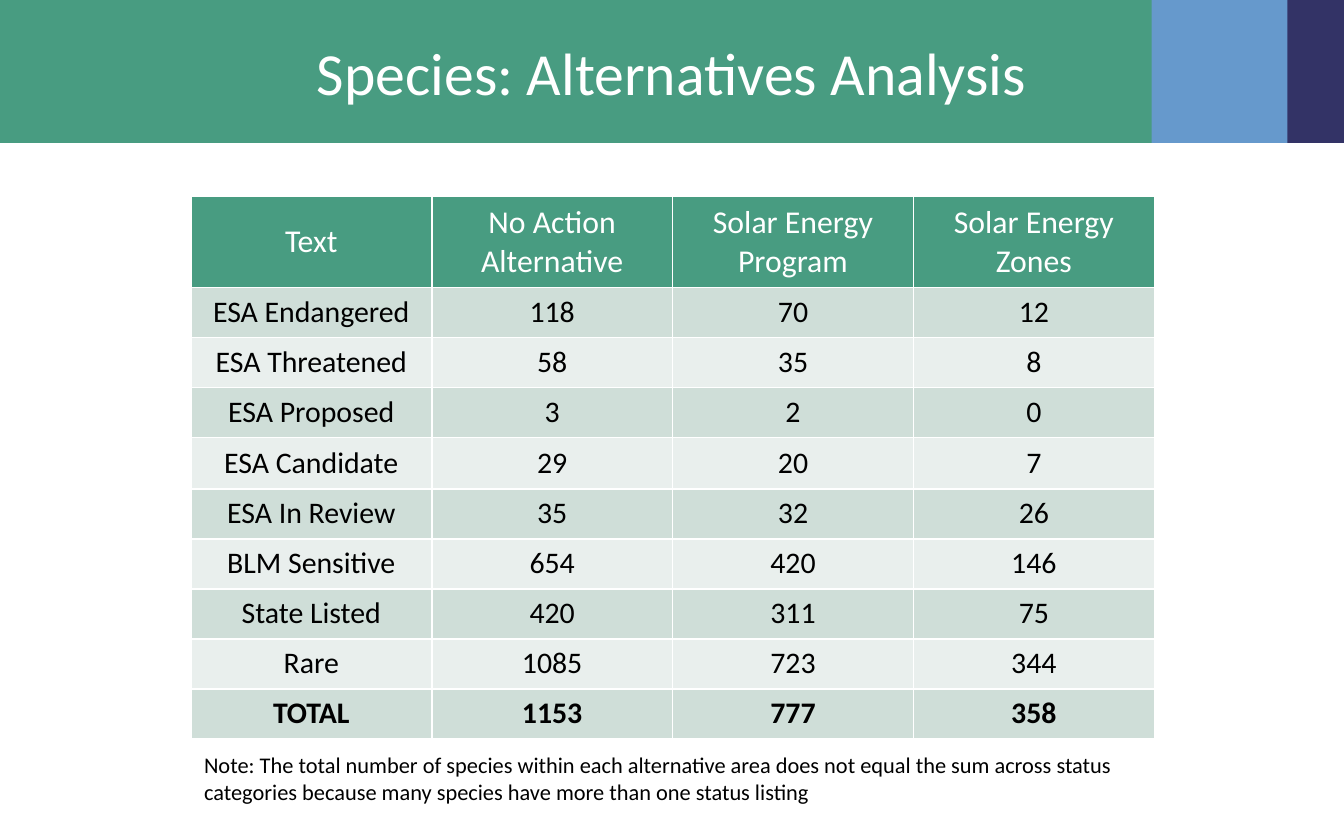
from lxml import etree
from pptx import Presentation, util as u
from pptx.dml.color import RGBColor
from pptx.enum import shapes, text
from pptx.oxml.ns import qn

WIDE, HIGH = u.Inches(10), u.Inches(6.25)
GREEN, WHITE, BLACK = "489C81", "FFFFFF", "000000"
BANDS = ["CFDED8", "E9EFED"]
BARS = [(0.943, 0.058, "333366"), (0.853, 0.105, "6699CC"), (0, 0.857, GREEN)]
HEADS = ["Text", "No Action Alternative", "Solar Energy Program", "Solar Energy Zones"]
ROWS = [
    ["ESA Endangered", 118, 70, 12],
    ["ESA Threatened", 58, 35, 8],
    ["ESA Proposed", 3, 2, 0],
    ["ESA Candidate", 29, 20, 7],
    ["ESA In Review", 35, 32, 26],
    ["BLM Sensitive", 654, 420, 146],
    ["State Listed", 420, 311, 75],
    ["Rare", 1085, 723, 344],
    ["TOTAL", 1153, 777, 358],
]
TALLS = [0.65] + [0.355] * 3 + [0.38] + [0.355] * 5
NOTE = ("Note: The total number of species within each alternative area does not equal "
        "the sum across status categories because many species have more than one status listing")
MID = text.PP_ALIGN.CENTER
CORE = text.MSO_ANCHOR.MIDDLE


def share(left, top, width, height):
    return [round(part * full) for part, full in
            zip((left, top, width, height), (WIDE, HIGH, WIDE, HIGH))]


def tint(hue):
    return RGBColor.from_string(hue)


def paint(item, hue):
    item.fill.solid()
    item.fill.fore_color.rgb = tint(hue)


def put(item, mode):
    for name, value in mode.items():
        setattr(item, name, value)


def write(frame, words, hue, size, align=None, bold=False):
    frame.text = words
    para = frame.paragraphs[0]
    if align is not None:
        para.alignment = align
    put(para.font, {"name": "Calibri", "size": u.Pt(size), "bold": bold})
    para.font.color.rgb = tint(hue)


def edge(cell):
    props = cell._tc.get_or_add_tcPr()
    for spot, side in enumerate(("lnL", "lnR", "lnT", "lnB")):
        line = etree.Element(qn(f"a:{side}"), w=str(u.Pt(1)))
        fill = etree.SubElement(line, qn("a:solidFill"))
        etree.SubElement(fill, qn("a:srgbClr"), val=WHITE)
        props.insert(spot, line)


def header(slide, box):
    left, top, width, height = box
    for start, span, hue in BARS:
        bar = slide.shapes.add_shape(
            shapes.MSO_SHAPE.RECTANGLE, left + round(start * width), top,
            round(span * width), height)
        bar.shadow.inherit = False
        bar.line.fill.background()
        paint(bar, hue)
    title = slide.shapes.title
    put(title, {"left": left + round(0.05 * width), "top": top + round(0.115 * height),
                "width": round(0.9 * width), "height": round(0.78 * height)})
    put(title.text_frame, {"vertical_anchor": CORE, "word_wrap": True})
    write(title.text_frame, "Species: Alternatives Analysis", WHITE, 32, MID)
    slide.shapes._spTree.append(title._element)


def grid(slide, box):
    width = box[2]
    table = slide.shapes.add_table(len(ROWS) + 1, len(HEADS), *box).table
    for col in table.columns:
        col.width = width // len(HEADS)
    for row, tall in zip(table.rows, TALLS):
        row.height = u.Inches(tall)
    for at, line in enumerate([HEADS] + ROWS):
        top = at == 0
        for col, value in enumerate(line):
            cell = table.cell(at, col)
            cell.vertical_anchor = CORE
            paint(cell, GREEN if top else BANDS[(at - 1) % 2])
            edge(cell)
            write(cell.text_frame, str(value), WHITE if top else BLACK,
                  17 if top else 16, MID, at == len(ROWS))


def note(slide, box):
    frame = slide.shapes.add_textbox(*box).text_frame
    put(frame, {"word_wrap": True, "auto_size": text.MSO_AUTO_SIZE.SHAPE_TO_FIT_TEXT})
    write(frame, NOTE, BLACK, 12)


def main():
    deck = Presentation()
    put(deck, {"slide_width": WIDE, "slide_height": HIGH})
    slide = deck.slides.add_slide(deck.slide_layouts[5])
    header(slide, share(0, 0, 1, 0.17))
    grid(slide, share(0.142, 0.234, 0.717, 0.62))
    note(slide, share(0.142, 0.886, 0.717, 0.08))
    deck.save("out.pptx")


if __name__ == "__main__":
    main()
